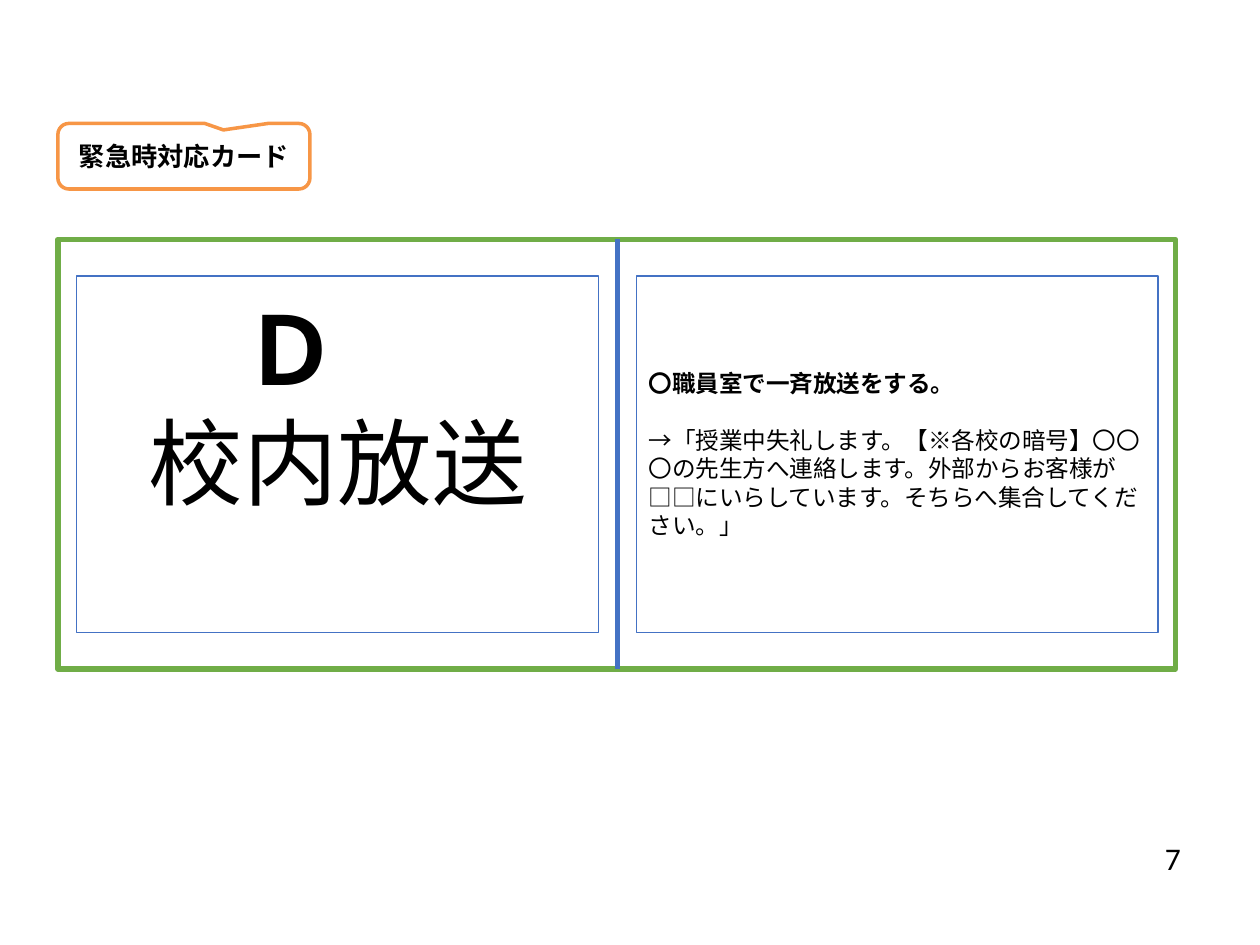
import pptx
import pptx.util
import pptx.dml.color
import pptx.enum.shapes
import pptx.enum.text
import pptx.oxml.ns
import lxml.etree

Inches = pptx.util.Inches
Pt = pptx.util.Pt
Shape = pptx.enum.shapes.MSO_SHAPE
Align = pptx.enum.text.PP_ALIGN
Anchor = pptx.enum.text.MSO_ANCHOR
NOTO = "Noto Sans CJK JP"
BLUE = "4472C4"


def tint(code):
    return pptx.dml.color.RGBColor.from_string(code)


def apply(item, style):
    for name, value in style.items():
        setattr(item, name, value)


def draw_line(line, code, width):
    line.color.rgb = tint(code)
    line.width = Pt(width)


def add_box(slide, kind, area, edge, width, fill=None):
    box = slide.shapes.add_shape(kind, *map(Inches, area))
    box.shadow.inherit = False
    if fill:
        box.fill.solid()
        box.fill.fore_color.rgb = tint(fill)
    else:
        box.fill.background()
    draw_line(box.line, edge, width)
    return box


def add_rule(slide, start, end, code, width):
    kind = pptx.enum.shapes.MSO_CONNECTOR.STRAIGHT
    rule = slide.shapes.add_connector(kind, *map(Inches, start + end))
    draw_line(rule.line, code, width)
    lxml.etree.SubElement(rule._element.spPr, pptx.oxml.ns.qn("a:effectLst"))


def set_frame(shape, anchor, insets=(0.1, 0.05, 0.1, 0.05)):
    frame = shape.text_frame
    sides = ("left", "top", "right", "bottom")
    apply(frame, {f"margin_{side}": Inches(gap) for side, gap in zip(sides, insets)})
    apply(frame, {"word_wrap": True, "vertical_anchor": anchor})
    return frame


def add_text(frame, words, face, size, bold=False, **style):
    first = frame.paragraphs[0]
    para = frame.add_paragraph() if first.runs else first
    apply(para, style)
    run = para.add_run()
    run.text = words
    apply(run.font, {"name": face, "size": Pt(size), "bold": bold})
    run.font.color.rgb = tint("000000")
    east = lxml.etree.SubElement(run.font._element, pptx.oxml.ns.qn("a:ea"))
    east.set("typeface", NOTO)


def add_label(slide):
    label = add_box(slide, Shape.ROUNDED_RECTANGULAR_CALLOUT, (0.46, 0.98, 2, 0.52), "F79646", 2, "FFFFFF")
    for index, value in enumerate((0.157, -0.401, 0.167)):
        label.adjustments[index] = value
    frame = set_frame(label, Anchor.MIDDLE, (0.07, 0.04, 0.07, 0.04))
    add_text(frame, "緊急時対応カード", "Cambria", 15, True, alignment=Align.CENTER)


def add_role(slide):
    panel = add_box(slide, Shape.RECTANGLE, (0.61, 2.19, 4.14, 2.83), BLUE, 0.75)
    frame = set_frame(panel, Anchor.TOP, (0.1, 0.12, 0.1, 0.05))
    style = {"alignment": Align.CENTER, "line_spacing": Pt(64.8)}
    add_text(frame, "Ｄ　", NOTO, 54, True, **style)
    add_text(frame, "校内放送", NOTO, 54, **style)


def add_steps(slide):
    panel = add_box(slide, Shape.RECTANGLE, (5.05, 2.19, 4.14, 2.83), BLUE, 0.75)
    frame = set_frame(panel, Anchor.MIDDLE)
    style = {"alignment": Align.LEFT, "line_spacing": Pt(16.2)}
    add_text(frame, "〇職員室で一斉放送をする。", NOTO, 13.5, True, **style)
    speech = (
        "→「授業中失礼します。【※各校の暗号】〇〇〇の先生方へ連絡します。"
        "外部からお客様が□□にいらしています。そちらへ集合してください。」"
    )
    add_text(frame, speech, NOTO, 13.5, space_before=Pt(16.2), **style)


def add_page(slide):
    box = slide.shapes.add_textbox(*map(Inches, (7.39, 6.56, 2.08, 0.5)))
    frame = set_frame(box, Anchor.MIDDLE)
    add_text(frame, "7", "Calibri", 18, alignment=Align.RIGHT)


def main():
    deck = pptx.Presentation()
    apply(deck, {"slide_width": Inches(10), "slide_height": Inches(7.5)})
    slide = deck.slides.add_slide(deck.slide_layouts[6])
    add_box(slide, Shape.RECTANGLE, (0.46, 1.9, 8.87, 3.41), "70AD47", 3, "FFFFFF")
    add_label(slide)
    add_steps(slide)
    add_rule(slide, (4.9, 1.9), (4.9, 5.31), BLUE, 3)
    add_role(slide)
    add_page(slide)
    deck.save("out.pptx")


if __name__ == "__main__":
    main()
